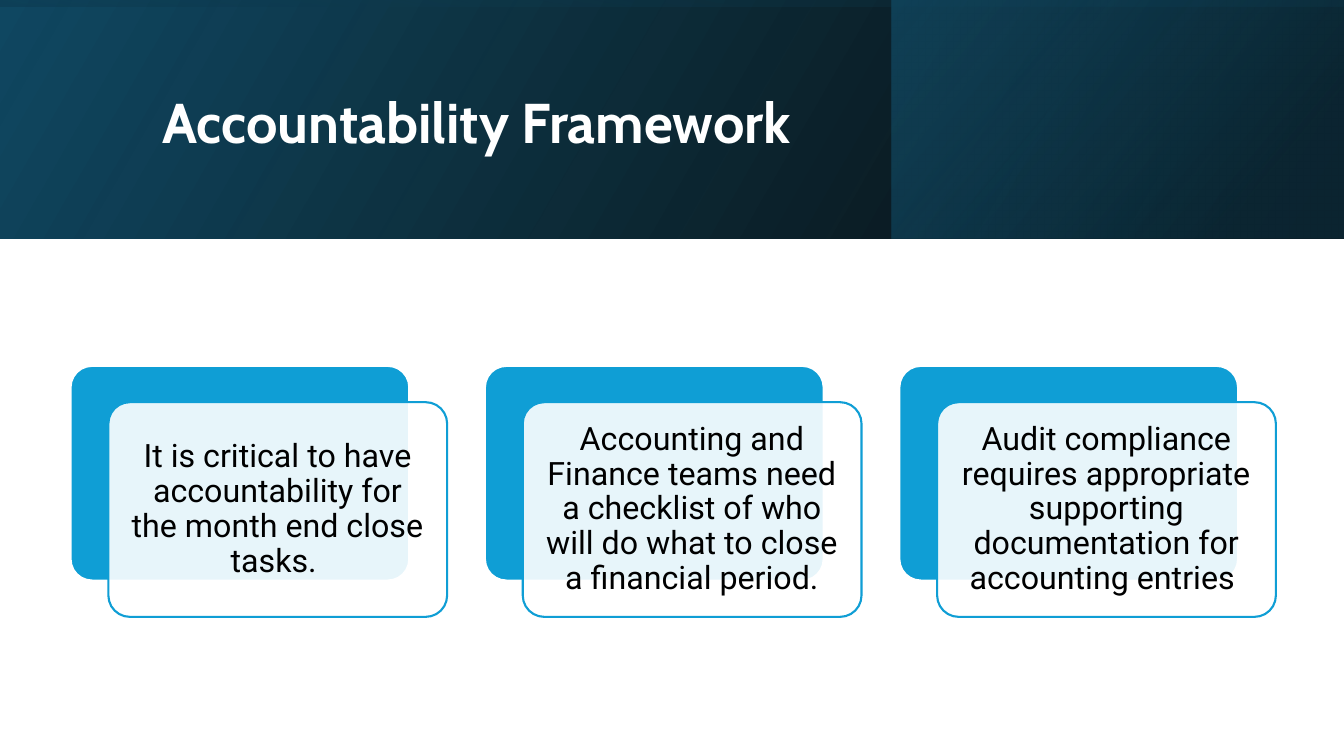
"""Build the Accountability Framework slide: a shaded banner over three layered cards."""
from dataclasses import dataclass

from lxml.etree import SubElement
from pptx import Presentation
from pptx.dml.color import RGBColor
from pptx.enum.shapes import MSO_SHAPE
from pptx.enum.text import MSO_ANCHOR, MSO_AUTO_SIZE, PP_ALIGN
from pptx.oxml.ns import qn
from pptx.util import Inches, Pt

TITLE = "Accountability Framework"
CARDS = [
    "It is critical to have accountability for the month end close tasks. ",
    "Accounting and Finance teams need a checklist of who will do what to close a financial period.",
    "Audit compliance requires appropriate supporting documentation for accounting entries ",
]


@dataclass(frozen=True)
class Theme:
    accent: str = "0F9ED5"
    white: str = "FFFFFF"
    black: str = "000000"
    navy: str = "104862"
    deep: str = "0B3041"
    teal: str = "156082"
    title_font: str = "Cabin"
    body_font: str = "Roboto"
    title_size: int = 40
    body_size: int = 23
    outline: float = 1.5
    veil: int = 90


THEME = Theme()
WIDTH, HEIGHT = 13.33, 7.5
BANNER = 2.37
SIDE = WIDTH - 8.84
BANDS = [
    {"at": (0, 0, WIDTH, BANNER), "turn": 0, "angle": 330,
     "stops": [(0, THEME.black, 96), (100, THEME.navy, 100)]},
    {"at": (WIDTH - SIDE, 0, SIDE, BANNER), "turn": 0, "angle": 320,
     "stops": [(19, THEME.deep, 68), (100, THEME.teal, 48)]},
    {"at": ((WIDTH - BANNER) / 2, (BANNER - WIDTH) / 2, BANNER, WIDTH), "turn": 270, "angle": 350,
     "stops": [(23, THEME.navy, 16), (99, THEME.black, 45)]},
]
TITLE_AT = (1.51, 0.38, 10.63, 1.72)
CARD_LEFT, CARD_TOP, CARD_STEP = 0.7, 3.63, 4.11
CARD_WIDTH, CARD_HEIGHT = 3.36, 2.13
CARD_SHIFT = (0.375, 0.36)
CARD_INSET = 0.16


def set_all(target, values):
    for name, value in values.items():
        setattr(target, name, value)


def set_alpha(color, percent):
    SubElement(color, qn("a:alpha")).set("val", str(percent * 1000))


def add_box(page, kind, place):
    box = page.shapes.add_shape(kind, *map(Inches, place))
    box.shadow.inherit = False
    return box


def add_band(page, band):
    box = add_box(page, MSO_SHAPE.RECTANGLE, band["at"])
    box.line.fill.background()
    box.rotation = band["turn"]
    box._element.spPr.find(qn("a:xfrm")).set("flipH", "1")
    box.fill.gradient()
    box.fill.gradient_angle = 360 - band["angle"]
    for stop, (position, color, _) in zip(box.fill.gradient_stops, band["stops"]):
        stop.position = position / 100
        stop.color.rgb = RGBColor.from_string(color)
    colors = box._element.spPr.iter(qn("a:srgbClr"))
    for color, (_, _, opacity) in zip(list(colors), band["stops"]):
        set_alpha(color, opacity)


def add_card(page, place, fill, line):
    box = add_box(page, MSO_SHAPE.ROUNDED_RECTANGLE, place)
    box.adjustments[0] = 0.1
    box.fill.solid()
    box.fill.fore_color.rgb = RGBColor.from_string(fill)
    box.line.color.rgb = RGBColor.from_string(line)
    box.line.width = Pt(THEME.outline)
    return box


def write(box, text, frame_format, para_format, font_format, color):
    frame = box.text_frame
    set_all(frame, {"word_wrap": True, "auto_size": MSO_AUTO_SIZE.NONE,
                    "vertical_anchor": MSO_ANCHOR.MIDDLE, **frame_format})
    para = frame.paragraphs[0]
    set_all(para, {"line_spacing": 0.9, **para_format})
    span = para.add_run()
    span.text = text
    set_all(span.font, font_format)
    span.font.color.rgb = RGBColor.from_string(color)


def main():
    deck = Presentation()
    set_all(deck, {"slide_width": Inches(WIDTH), "slide_height": Inches(HEIGHT)})
    page = deck.slides.add_slide(deck.slide_layouts[5])

    for band in BANDS:
        add_band(page, band)

    title = page.shapes.title
    page.shapes._spTree.append(title._element)
    set_all(title, dict(zip(("left", "top", "width", "height"), map(Inches, TITLE_AT))))
    write(title, TITLE, {}, {"alignment": PP_ALIGN.LEFT},
          {"name": THEME.title_font, "size": Pt(THEME.title_size), "bold": True}, THEME.white)

    insets = {f"margin_{side}": Inches(CARD_INSET) for side in ("left", "top", "right", "bottom")}
    for column, text in enumerate(CARDS):
        left = CARD_LEFT + column * CARD_STEP
        add_card(page, (left, CARD_TOP, CARD_WIDTH, CARD_HEIGHT), THEME.accent, THEME.white)
        front_place = (left + CARD_SHIFT[0], CARD_TOP + CARD_SHIFT[1], CARD_WIDTH, CARD_HEIGHT)
        front = add_card(page, front_place, THEME.white, THEME.accent)
        set_alpha(front._element.spPr.find(qn("a:solidFill"))[0], THEME.veil)
        write(front, text, insets, {"alignment": PP_ALIGN.CENTER},
              {"name": THEME.body_font, "size": Pt(THEME.body_size)}, THEME.black)

    deck.save("out.pptx")


if __name__ == "__main__":
    main()
